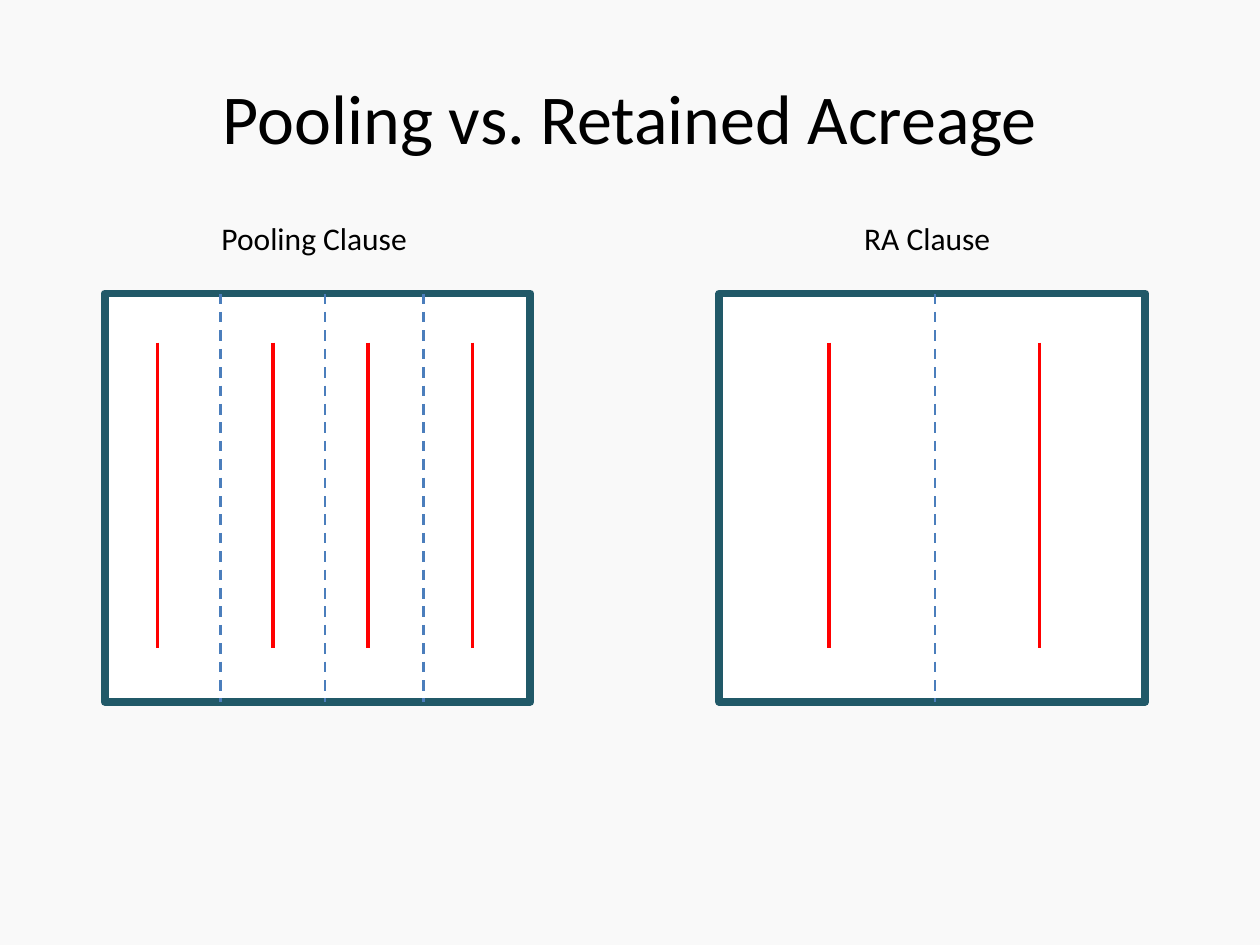
from pptx import Presentation
from pptx.dml.color import RGBColor
from pptx.enum import dml, shapes, text
from pptx.oxml.ns import qn
from pptx.util import Inches, Pt
from lxml import etree

COLORS = {
    "background": "F9F9F9",
    "ink": "000000",
    "tract": "FFFFFF",
    "border": "215968",
    "unit": "4B7EBC",
    "well": "FF0000",
}
FONT = "Calibri"

TITLE = "Pooling vs. Retained Acreage"
TRACTS = [
    {"label": "Pooling Clause", "label_left": 1.66, "label_width": 1.73, "left": 0.83,
     "units": [1.75, 2.58, 3.36], "wells": [1.25, 2.17, 2.92, 3.75]},
    {"label": "RA Clause", "label_left": 6.76, "label_width": 1.25, "left": 5.71,
     "units": [7.42], "wells": [6.58, 8.25]},
]
LABEL_TOP, LABEL_HEIGHT = 1.69, 0.4
TRACT_TOP, TRACT_WIDTH, TRACT_HEIGHT = 2.33, 3.38, 3.24
TRACT_BOTTOM = TRACT_TOP + TRACT_HEIGHT
WELL_TOP, WELL_BOTTOM = 2.72, 5.14


def color(name):
    return RGBColor.from_string(COLORS[name])


def add_text(page, content, left, top, width, height, size=18,
             align=text.PP_ALIGN.LEFT, anchor=text.MSO_ANCHOR.TOP, wrap=True):
    box = page.shapes.add_textbox(*map(Inches, (left, top, width, height)))
    frame = box.text_frame
    frame.word_wrap = wrap
    frame.vertical_anchor = anchor
    para = frame.paragraphs[0]
    para.alignment = align
    span = para.add_run()
    span.text = content
    span.font.name = FONT
    span.font.size = Pt(size)
    span.font.color.rgb = color("ink")


def add_tract(page, left):
    tract = page.shapes.add_shape(
        shapes.MSO_SHAPE.RECTANGLE,
        *map(Inches, (left, TRACT_TOP, TRACT_WIDTH, TRACT_HEIGHT)))
    tract.shadow.inherit = False
    tract.fill.solid()
    tract.fill.fore_color.rgb = color("tract")
    tract.line.color.rgb = color("border")
    tract.line.width = Pt(4.5)


def add_vertical(page, x, top, bottom, name, width, dash=None):
    line = page.shapes.add_connector(
        shapes.MSO_CONNECTOR.STRAIGHT, *map(Inches, (x, top, x, bottom)))
    line.line.color.rgb = color(name)
    line.line.width = Pt(width)
    if dash:
        line.line.dash_style = dash
    etree.SubElement(line._element.spPr, qn("a:effectLst"))


def main():
    deck = Presentation()
    deck.slide_width, deck.slide_height = Inches(10), Inches(7.5)
    page = deck.slides.add_slide(deck.slide_layouts[6])
    page.background.fill.solid()
    page.background.fill.fore_color.rgb = color("background")

    add_text(page, TITLE, 0.5, 0.3, 9, 1.25, size=40,
             align=text.PP_ALIGN.CENTER, anchor=text.MSO_ANCHOR.MIDDLE)
    for tract in TRACTS:
        add_tract(page, tract["left"])
        add_text(page, tract["label"], tract["label_left"], LABEL_TOP,
                 tract["label_width"], LABEL_HEIGHT, wrap=False)
        for x in tract["units"]:
            add_vertical(page, x, TRACT_TOP, TRACT_BOTTOM, "unit", 1.5,
                         dash=dml.MSO_LINE.DASH)
        for x in tract["wells"]:
            add_vertical(page, x, WELL_TOP, WELL_BOTTOM, "well", 2.25)

    deck.save("out.pptx")


if __name__ == "__main__":
    main()
